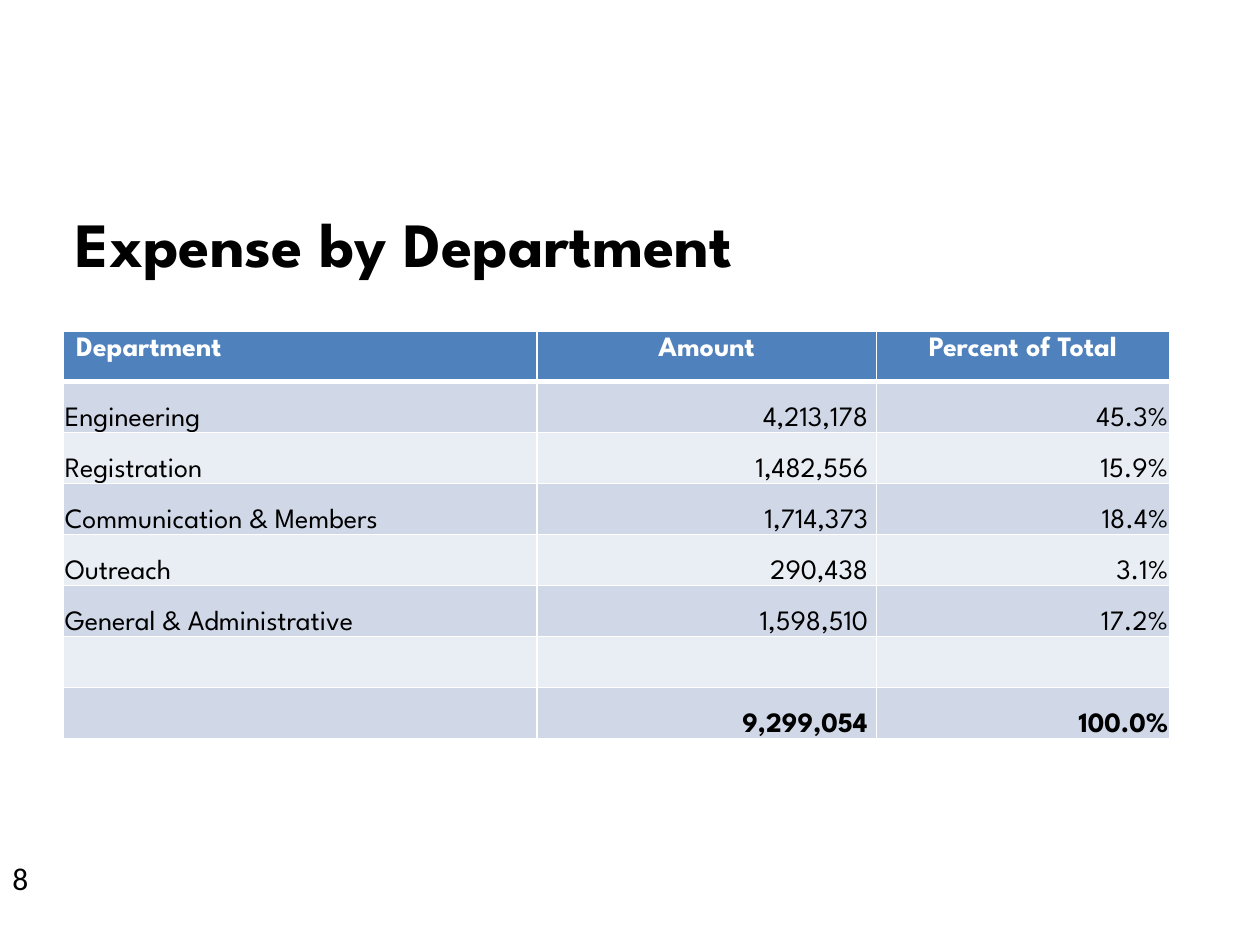
import pptx
import pptx.util
import pptx.dml.color
import pptx.enum.text
import pptx.oxml
import pptx.oxml.ns

Pt = pptx.util.Pt
RGBColor = pptx.dml.color.RGBColor
ALIGN = pptx.enum.text.PP_ALIGN
ANCHOR = pptx.enum.text.MSO_ANCHOR

BLACK = RGBColor(0x00, 0x00, 0x00)
WHITE = RGBColor(0xFF, 0xFF, 0xFF)
HEADER_BLUE = RGBColor(0x4F, 0x81, 0xBD)
BANDS = (RGBColor(0xD0, 0xD8, 0xE8), RGBColor(0xE9, 0xED, 0xF4))

HEADINGS = ("Department", "Amount", "Percent of Total")
EXPENSES = (
    ("Engineering", "4,213,178 ", "45.3%"),
    ("Registration", "1,482,556 ", "15.9%"),
    ("Communication & Members", "1,714,373 ", "18.4%"),
    ("Outreach", "290,438 ", "3.1%"),
    ("General & Administrative", "1,598,510 ", "17.2%"),
    ("", "", ""),
    ("", "9,299,054 ", "100.0%"),
)
COLUMN_WIDTHS = (270.5, 194, 167.5)


def write(tf, text, size=16, font="League Spartan", color=BLACK, bold=False,
          align=ALIGN.LEFT):
    """Put one formatted paragraph in a text frame."""
    p = tf.paragraphs[0]
    p.alignment = align
    if text:
        p.add_run().text = text
    p.font.size = Pt(size)
    for r in p.runs:
        r.font.size = Pt(size)
        r.font.name = font
        r.font.bold = bold
        r.font.color.rgb = color


def set_borders(cell, bottom=1):
    """Draw white lines on all four sides of a cell."""
    tc_pr = cell._tc.get_or_add_tcPr()
    sides = (("lnL", 1), ("lnR", 1), ("lnT", 1), ("lnB", bottom))
    for i, (side, width) in enumerate(sides):
        line = pptx.oxml.parse_xml(
            f'<a:{side} {pptx.oxml.ns.nsdecls("a")} w="{Pt(width)}">'
            f'<a:solidFill><a:srgbClr val="{WHITE}"/></a:solidFill></a:{side}>')
        tc_pr.insert(i, line)


def fill_cell(cell, color):
    cell.fill.solid()
    cell.fill.fore_color.rgb = color


def add_title(s, left, top, width, height):
    sp = s.shapes.title
    sp.left, sp.top, sp.width, sp.height = map(Pt, (left, top, width, height))
    tf = sp.text_frame
    tf.vertical_anchor = ANCHOR.MIDDLE
    write(tf, "Expense by Department", size=36, bold=True)


def add_expense_table(s, left, top, width, height):
    row_count = len(EXPENSES) + 1
    table = s.shapes.add_table(row_count, len(HEADINGS), Pt(left), Pt(top),
                               Pt(width), Pt(height)).table
    for column, column_width in zip(table.columns, COLUMN_WIDTHS):
        column.width = Pt(column_width)
    for row in table.rows:
        row.height = Pt(height / row_count)

    # Header row
    for c, heading in enumerate(HEADINGS):
        cell = table.cell(0, c)
        fill_cell(cell, HEADER_BLUE)
        set_borders(cell, bottom=3)
        write(cell.text_frame, heading, color=WHITE, bold=True,
              align=ALIGN.CENTER if c else ALIGN.LEFT)

    # Departments, then the total in the last row
    for r, values in enumerate(EXPENSES, start=1):
        for c, value in enumerate(values):
            cell = table.cell(r, c)
            fill_cell(cell, BANDS[(r - 1) % 2])
            set_borders(cell, bottom=1)
            cell.vertical_anchor = ANCHOR.BOTTOM
            cell.margin_left = cell.margin_right = cell.margin_top = Pt(0.72)
            cell.margin_bottom = 0
            write(cell.text_frame, value, bold=r == len(EXPENSES),
                  align=ALIGN.RIGHT if c else ALIGN.LEFT)

    # The header's thick rule is shared with the row below
    for c in range(len(HEADINGS)):
        table.cell(1, c)._tc.tcPr.find(pptx.oxml.ns.qn("a:lnT")).set("w", str(Pt(3)))


def add_page_number(s, left, top, width, height):
    tf = s.shapes.add_textbox(Pt(left), Pt(top), Pt(width), Pt(height)).text_frame
    tf.word_wrap = True
    tf.auto_size = pptx.enum.text.MSO_AUTO_SIZE.SHAPE_TO_FIT_TEXT
    write(tf, "8", size=18, font="Calibri")


def main():
    prs = pptx.Presentation()
    prs.slide_width, prs.slide_height = Pt(720), Pt(540)
    s = prs.slides.add_slide(prs.slide_layouts[5])
    add_title(s, 36, 88, 556, 100.5)
    add_expense_table(s, 36.3, 189, 632, 233)
    add_page_number(s, 0, 487.5, 53.5, 29)
    prs.save("out.pptx")


if __name__ == "__main__":
    main()
